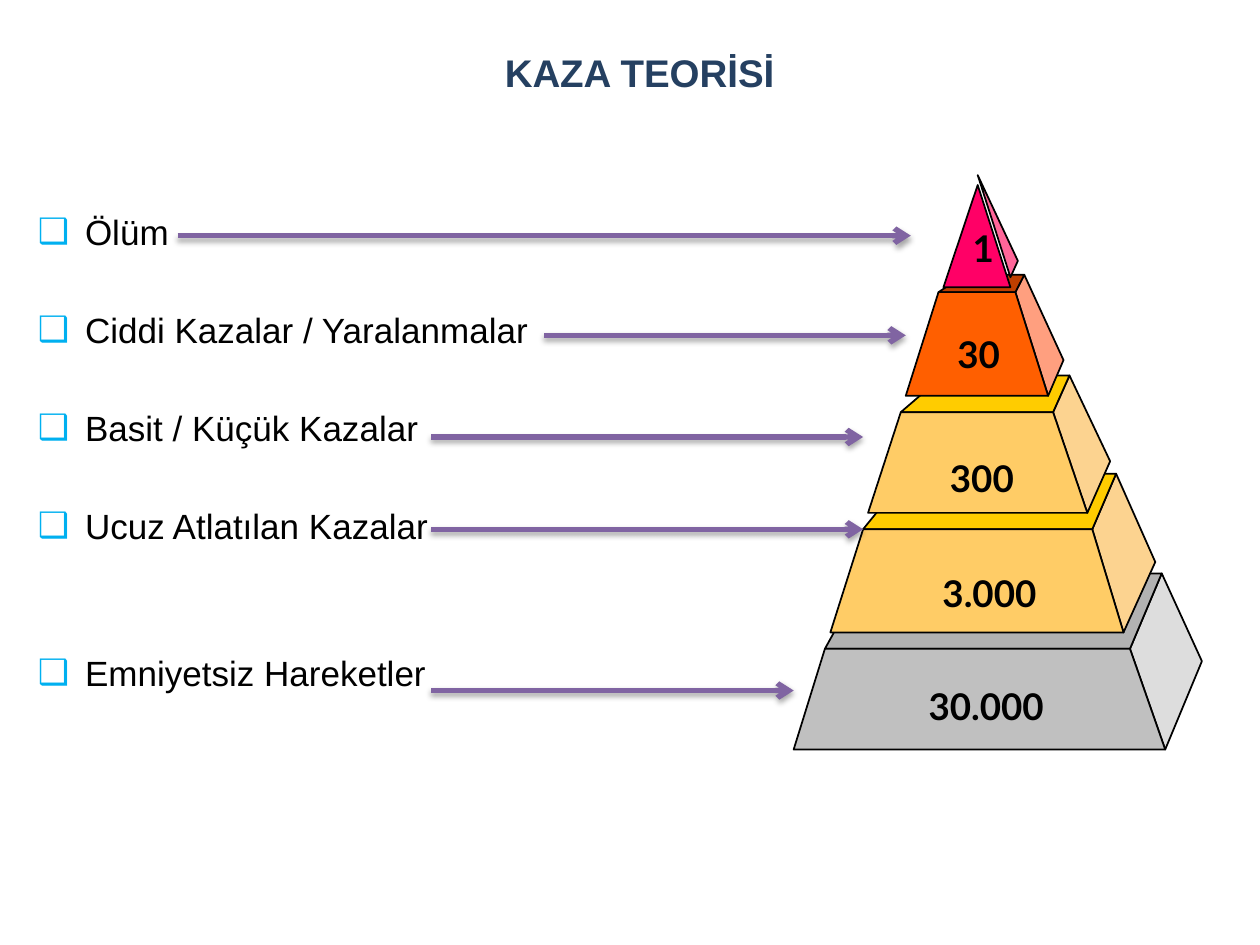
from collections import namedtuple

from lxml import etree
from pptx import Presentation
from pptx import util as u
from pptx.dml.color import RGBColor
from pptx.enum import shapes, text
from pptx.oxml import parse_xml
from pptx.oxml.ns import nsdecls, qn

NAVY = RGBColor(0x25, 0x40, 0x61)
BLACK = RGBColor(0, 0, 0)
CYAN = RGBColor(0x00, 0xB0, 0xF0)
PURPLE = RGBColor(0x80, 0x64, 0xA2)
GREY, MID_GREY, PALE_GREY = (RGBColor(v, v, v) for v in (0xC0, 0xB2, 0xDD))
SAND = RGBColor(0xFF, 0xCC, 0x66)
YELLOW = RGBColor(0xFF, 0xCC, 0x00)
PALE_SAND = RGBColor(0xFC, 0xD3, 0x90)
ORANGE = RGBColor(0xFF, 0x5F, 0x00)
BROWN = RGBColor(0xBF, 0x3F, 0x00)
SALMON = RGBColor(0xFF, 0x9F, 0x7F)
CRIMSON = RGBColor(0xFF, 0x00, 0x66)
PINK = RGBColor(0xFF, 0x66, 0x99)

# All lengths below are centimetres
Box = namedtuple("Box", "left top width height")
# Front trapezoid, back edge of the top face, and the side's outer corner
Tier = namedtuple("Tier", "base_left base_right base_y top_left top_right top_y "
                          "back_left back_right back_y corner_x corner_y "
                          "front_fill top_fill side_fill")

TIERS = [  # bottom to top
    Tier(0, 7.49, 11.58, 0.63, 6.78, 9.55, 1.47, 7.42, 8.03, 8.23, 9.8,
         GREY, MID_GREY, PALE_GREY),
    Tier(0.74, 6.65, 9.22, 1.4, 6.02, 7.14, 2.31, 6.5, 6.02, 7.29, 7.8,
         SAND, YELLOW, PALE_SAND),
    Tier(1.5, 5.92, 6.81, 2.16, 5.23, 4.78, 3.02, 5.56, 4.04, 6.38, 5.77,
         SAND, YELLOW, PALE_SAND),
    Tier(2.26, 5.13, 4.45, 2.92, 4.47, 2.36, 3.45, 4.65, 2.01, 5.44, 3.73,
         ORANGE, BROWN, SALMON),
]
TIER_LABELS = [  # wording, left, top, width
    ("1", 3.36, 0.89, 0.76),
    ("30", 3.05, 3.03, 1.32),
    ("300", 2.9, 5.54, 1.78),
    ("3.000", 2.75, 7.85, 2.44),
    ("30.000", 2.47, 10.13, 2.84),
]
ACCIDENTS = [  # wording, space before in points
    ("Ölüm", 0),
    ("Ciddi Kazalar / Yaralanmalar", 32),
    ("Basit / Küçük Kazalar", 32),
    ("Ucuz Atlatılan Kazalar", 32),
    ("Emniyetsiz Hareketler", 60),
]
ARROWS = [  # start x, end x, y
    (0, 14.78, 0),
    (7.39, 14.68, 2.01),
    (5.11, 13.82, 4.06),
    (5.11, 13.82, 5.92),
    (5.11, 12.42, 9.17),
]


def place(shape, box):
    shape.left, shape.top, shape.width, shape.height = map(u.Cm, box)


def add_span(para, wording, size, font, colour, bold=False):
    span = para.add_run()
    span.text = wording
    span.font.size = u.Pt(size)
    span.font.name = font
    span.font.bold = bold
    span.font.color.rgb = colour


def fill_title(title, box):
    place(title, box)
    frame = title.text_frame
    frame.vertical_anchor = text.MSO_ANCHOR.MIDDLE
    para = frame.paragraphs[0]
    para.alignment = text.PP_ALIGN.CENTER
    add_span(para, "KAZA TEORİSİ", 22, "Arial", NAVY, bold=True)


def add_bullet(para):
    properties = para._p.get_or_add_pPr()
    properties.set("marL", str(u.Cm(0.95)))
    properties.set("indent", str(-u.Cm(0.95)))
    colour = etree.SubElement(properties, qn("a:buClr"))
    etree.SubElement(colour, qn("a:srgbClr"), val=str(CYAN))
    etree.SubElement(properties, qn("a:buChar"), char="❑")


def fill_list(body, box):
    place(body, box)
    frame = body.text_frame
    frame.auto_size = text.MSO_AUTO_SIZE.NONE
    frame.vertical_anchor = text.MSO_ANCHOR.TOP
    for index, (wording, gap) in enumerate(ACCIDENTS):
        para = frame.add_paragraph() if index else frame.paragraphs[0]
        add_bullet(para)
        para.alignment = text.PP_ALIGN.LEFT
        para.space_before = u.Pt(gap)
        add_span(para, wording, 20, "Arial", BLACK)


def add_face(group, box, points, colour):
    corners = [(u.Cm(box.left + x), u.Cm(box.top + y)) for x, y in points]
    builder = group.shapes.build_freeform(*corners[0])
    builder.add_line_segments(corners[1:], close=True)
    face = builder.convert_to_shape()
    face.shadow.inherit = False
    face.fill.solid()
    face.fill.fore_color.rgb = colour
    face.line.color.rgb = BLACK
    face.line.width = u.Pt(1)


def add_pyramid(page, box):
    group = page.shapes.add_group_shape()
    # Truncated tiers
    for t in TIERS:
        base_left, base_right = (t.base_left, t.base_y), (t.base_right, t.base_y)
        top_left, top_right = (t.top_left, t.top_y), (t.top_right, t.top_y)
        back_left, back_right = (t.back_left, t.back_y), (t.back_right, t.back_y)
        corner = (t.corner_x, t.corner_y)
        add_face(group, box, [base_right, top_right, back_right, corner], t.side_fill)
        add_face(group, box, [top_left, top_right, back_right, back_left], t.top_fill)
        add_face(group, box, [base_left, base_right, top_right, top_left], t.front_fill)
    # Tip
    add_face(group, box, [(4.37, 2.06), (4.52, 1.73), (3.71, 0)], PINK)
    add_face(group, box, [(3.02, 2.26), (4.37, 2.26), (3.71, 0.2)], CRIMSON)
    # Numbers, with no right margin so that each stays on one line
    for wording, left, top, width in TIER_LABELS:
        label = group.shapes.add_textbox(
            u.Cm(box.left + left), u.Cm(box.top + top), u.Cm(width), u.Cm(1.14))
        frame = label.text_frame
        frame.word_wrap = True
        frame.margin_right = 0
        add_span(frame.paragraphs[0], wording, 21, "Lato", BLACK, bold=True)


def add_arrows(page, box):
    for start, end, y in ARROWS:
        height = u.Cm(box.top + y)
        arrow = page.shapes.add_connector(
            shapes.MSO_CONNECTOR.STRAIGHT,
            u.Cm(box.left + start), height, u.Cm(box.left + end), height)
        arrow.line.color.rgb = PURPLE
        arrow.line.width = u.Pt(3)
        etree.SubElement(arrow.line._get_or_add_ln(), qn("a:tailEnd"), type="arrow")
        # Soft shadow straight below
        arrow._element.spPr.append(parse_xml(
            f'<a:effectLst {nsdecls("a")}>'
            '<a:outerShdw blurRad="40000" dist="23000" dir="5400000" rotWithShape="0">'
            f'<a:srgbClr val="{BLACK}"><a:alpha val="35000"/></a:srgbClr>'
            '</a:outerShdw></a:effectLst>'))


def main():
    deck = Presentation()
    deck.slide_width, deck.slide_height = u.Cm(25.4), u.Cm(19.05)
    page = deck.slides.add_slide(deck.slide_layouts[0])
    fill_title(page.shapes.title, Box(0.51, 0, 24.77, 2.92))
    fill_list(page.placeholders[1], Box(0.51, 4.11, 24.61, 13))
    add_pyramid(page, Box(16, 3.53, 8.23, 11.58))
    add_arrows(page, Box(3.58, 4.75, 14.78, 9.17))
    deck.save("out.pptx")


if __name__ == "__main__":
    main()
